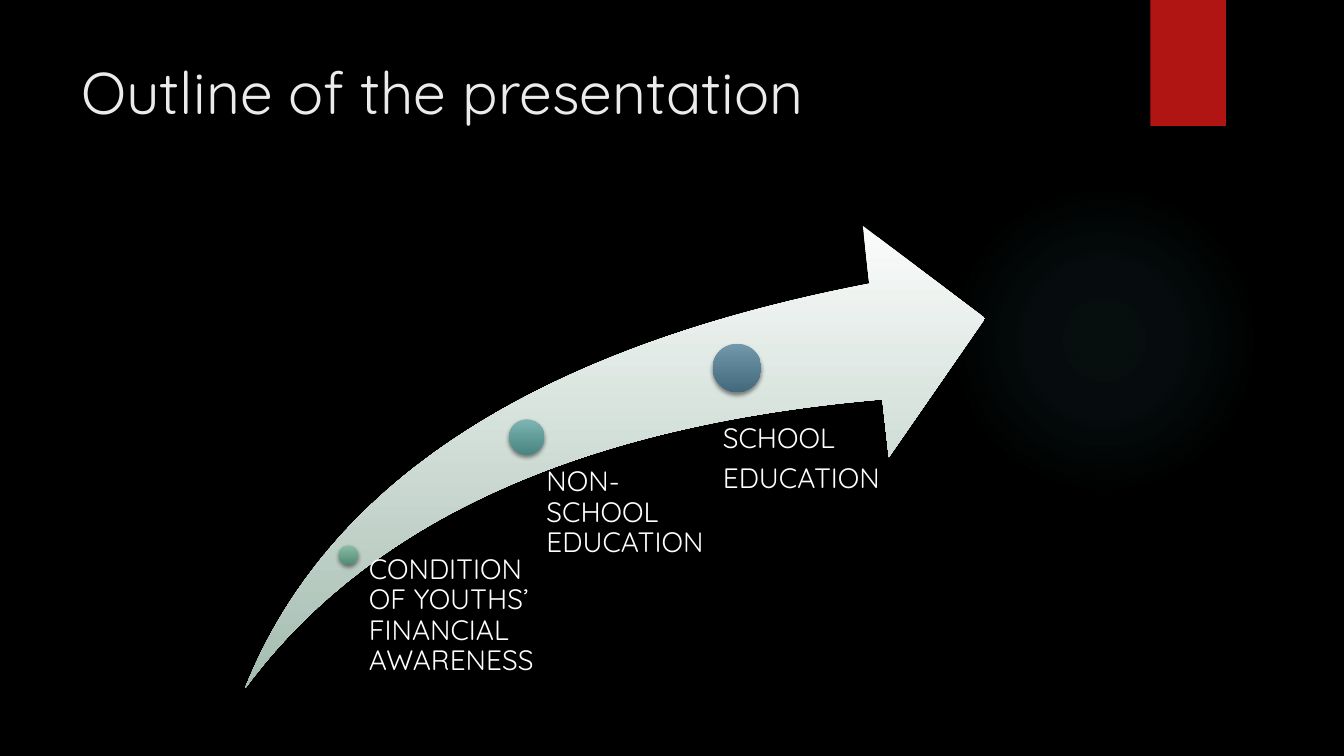
"""Build the slide that outlines the presentation along a rising arrow."""
from dataclasses import dataclass

from lxml.etree import SubElement
from pptx import Presentation
from pptx.dml.color import RGBColor
from pptx.enum.shapes import MSO_SHAPE as Preset
from pptx.enum.text import MSO_ANCHOR as Anchor
from pptx.oxml.ns import qn
from pptx.shapes.autoshape import Shape
from pptx.slide import Slide
from pptx.util import Emu, Pt

PX = 9144
FONT = "Quicksand"
COLORS = {
    "background": "000000",
    "ribbon": "B01513",
    "title": "EBEBEB",
    "label": "FFFFFF",
    "glow": "50B9C1",
    "shadow": "000000",
    "arrow top": "FAFCFB",
    "arrow bottom": "A4BCB0",
    "green top": "89BDA7",
    "green bottom": "538C74",
    "teal top": "7CB5B2",
    "teal bottom": "4A8582",
    "blue top": "7198AB",
    "blue bottom": "436A7C",
}


@dataclass(frozen=True)
class Area:
    left: int
    top: int
    width: int
    height: int

    def emu(self) -> list[Emu]:
        return [Emu(px * PX) for px in (self.left, self.top, self.width, self.height)]


@dataclass(frozen=True)
class Milestone:
    dot: Area
    hue: str
    label: Area
    inset: int
    lines: tuple[str, ...]


MILESTONES = (
    Milestone(Area(336, 541, 19, 19), "green", Area(356, 551, 200, 133), 10,
              ("CONDITION OF YOUTHS’ FINANCIAL AWARENESS",)),
    Milestone(Area(505, 416, 35, 35), "teal", Area(524, 464, 192, 190), 18,
              ("NON-SCHOOL EDUCATION",)),
    Milestone(Area(707, 341, 48, 48), "blue", Area(692, 421, 254, 207), 25,
              ("SCHOOL", "EDUCATION")),
)


def color(name: str) -> RGBColor:
    return RGBColor.from_string(COLORS[name])


def add_color(parent, name: str, opacity: int) -> None:
    tint = SubElement(parent, qn("a:srgbClr"), val=COLORS[name])
    SubElement(tint, qn("a:alpha"), val=str(opacity * 1000))


def add_plain(page: Slide, preset: Preset, area: Area) -> Shape:
    shape = page.shapes.add_shape(preset, *area.emu())
    shape.shadow.inherit = False
    shape.line.fill.background()
    return shape


def fill_down(shape: Shape, hue: str) -> None:
    shape.fill.gradient()
    shape.fill.gradient_angle = 270
    for stop, end in zip(shape.fill.gradient_stops, ("top", "bottom")):
        stop.color.rgb = color(f"{hue} {end}")


def drop_shadow(shape: Shape) -> None:
    effects = shape._element.spPr.find(qn("a:effectLst"))
    shadow = SubElement(effects, qn("a:outerShdw"), blurRad=str(Pt(3)), dist=str(Pt(2)),
                        dir="5400000", rotWithShape="0")
    add_color(shadow, "shadow", 45)


def add_glow(page: Slide, area: Area) -> None:
    glow = add_plain(page, Preset.OVAL, area)
    glow.fill.gradient()
    gradient = glow._element.spPr.find(qn("a:gradFill"))
    for child in list(gradient):
        gradient.remove(child)
    stops = SubElement(gradient, qn("a:gsLst"))
    for position, opacity in ((0, 7), (36, 6), (69, 0)):
        stop = SubElement(stops, qn("a:gs"), pos=str(position * 1000))
        add_color(stop, "glow", opacity)
    center = SubElement(gradient, qn("a:path"), path="circle")
    SubElement(center, qn("a:fillToRect"), l="50000", t="50000", r="50000", b="50000")


def add_text(page: Slide, area: Area, lines: tuple[str, ...], size: int, tone: str,
             insets: tuple[int, int, int, int], line_spacing: float = 1.0,
             space_after: int = 0) -> None:
    frame = page.shapes.add_textbox(*area.emu()).text_frame
    frame.word_wrap = True
    frame.vertical_anchor = Anchor.TOP
    (frame.margin_left, frame.margin_top,
     frame.margin_right, frame.margin_bottom) = [Emu(px * PX) for px in insets]
    frame.text = "\n".join(lines)
    for para in frame.paragraphs:
        para.line_spacing = line_spacing
        para.space_after = Pt(space_after)
        para.font.name = FONT
        para.font.size = Pt(size)
        para.font.color.rgb = color(tone)


def add_milestone(page: Slide, milestone: Milestone) -> None:
    dot = add_plain(page, Preset.OVAL, milestone.dot)
    fill_down(dot, milestone.hue)
    drop_shadow(dot)
    add_text(page, milestone.label, milestone.lines, 20, "label",
             (milestone.inset, 0, 0, 0), line_spacing=0.9, space_after=7)


def main() -> None:
    deck = Presentation()
    deck.slide_width, deck.slide_height = Emu(1333 * PX), Emu(750 * PX)
    page = deck.slides.add_slide(deck.slide_layouts[6])
    page.background.fill.solid()
    page.background.fill.fore_color.rgb = color("background")

    add_glow(page, Area(941, 183, 308, 308))
    ribbon = add_plain(page, Preset.RECTANGLE, Area(1141, 0, 75, 125))
    ribbon.fill.solid()
    ribbon.fill.fore_color.rgb = color("ribbon")
    drop_shadow(ribbon)
    add_text(page, Area(71, 50, 1029, 153), ("Outline of the presentation",), 42, "title",
             (10, 5, 10, 5))

    arrow = add_plain(page, Preset.SWOOSH_ARROW, Area(243, 224, 734, 459))
    arrow.adjustments[0] = arrow.adjustments[1] = 0.25
    fill_down(arrow, "arrow")
    for milestone in MILESTONES:
        add_milestone(page, milestone)
    deck.save("out.pptx")


if __name__ == "__main__":
    main()
